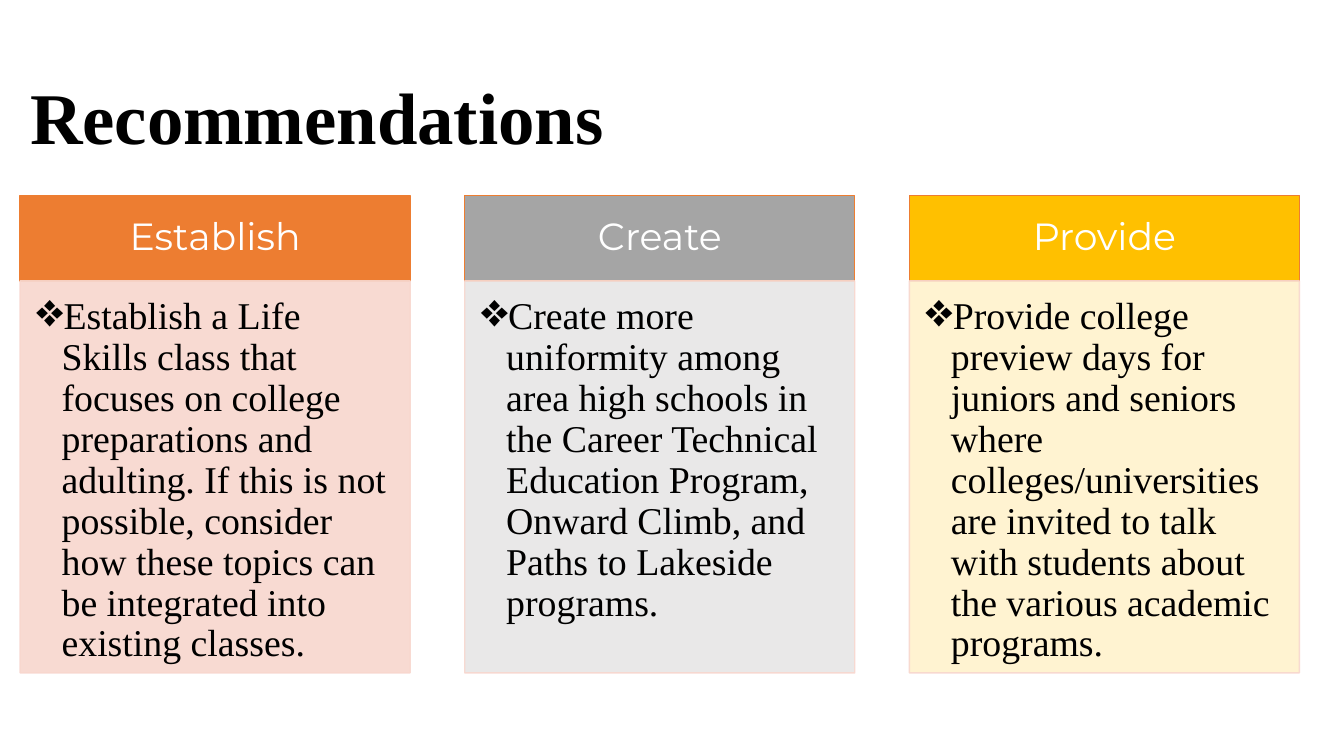
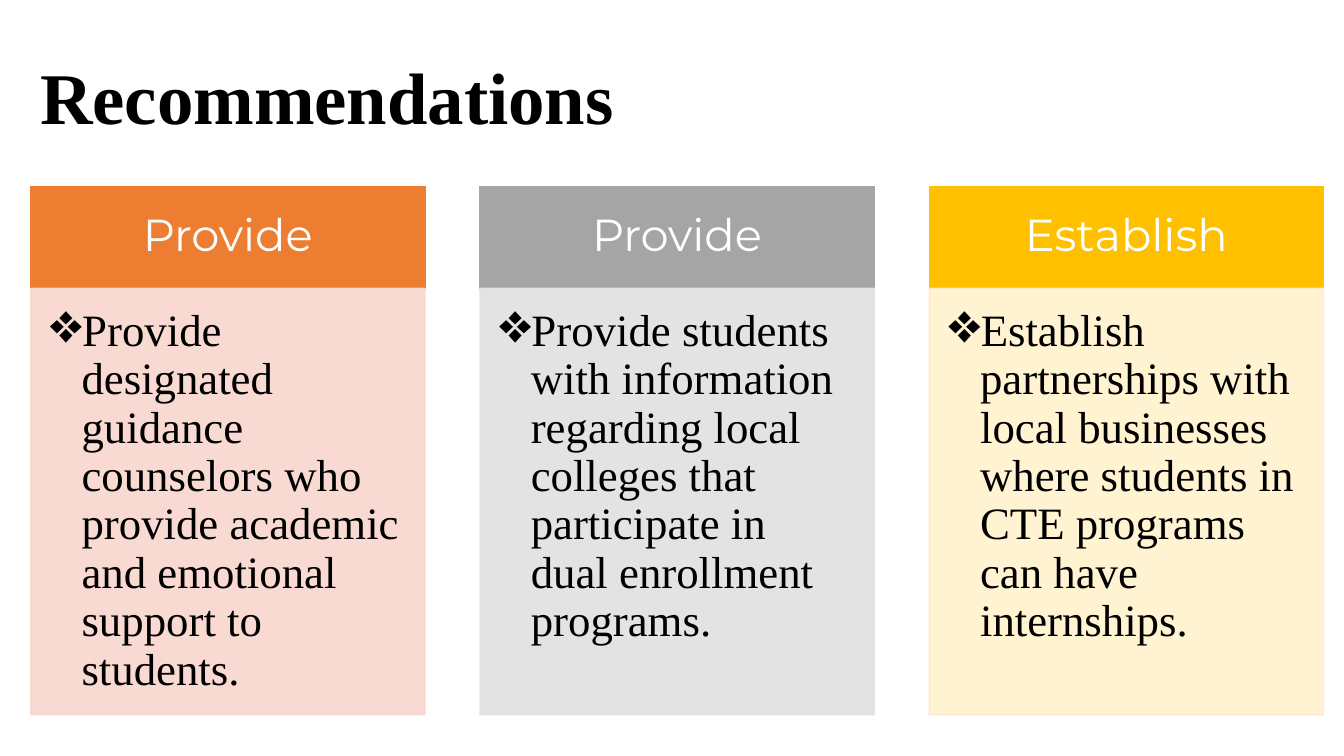
from lxml import etree
from pptx import Presentation
from pptx.dml.color import RGBColor
from pptx.enum.shapes import MSO_SHAPE
from pptx.enum.text import MSO_ANCHOR, PP_ALIGN
from pptx.oxml.ns import qn
from pptx.util import Pt

RECTANGLE = MSO_SHAPE.RECTANGLE
TOP, MIDDLE = MSO_ANCHOR.TOP, MSO_ANCHOR.MIDDLE
LEFT, CENTER = PP_ALIGN.LEFT, PP_ALIGN.CENTER

# Shared look
WHITE = RGBColor(0xFF, 0xFF, 0xFF)
BLACK = RGBColor(0x00, 0x00, 0x00)
ORANGE = RGBColor(0xED, 0x7D, 0x31)
GRAY = RGBColor(0xA5, 0xA5, 0xA5)
GOLD = RGBColor(0xFF, 0xC0, 0x00)
PEACH = RGBColor(0xF8, 0xD7, 0xCE)
PALE_GRAY = RGBColor(0xE7, 0xE6, 0xE6)
SILVER = RGBColor(0xE1, 0xE1, 0xE1)
CREAM = RGBColor(0xFF, 0xF2, 0xCC)
APRICOT = RGBColor(0xFF, 0xE8, 0xCC)
SERIF, SANS = "Times New Roman", "Montserrat"
TITLE_SIZE = 52
GAP_RATIO = 0.14        # gap between columns, as a share of column width
HEADER_INSETS = (0.56, 0.32, 0.56, 0.32)    # left, top, right, bottom, in ems
BODY_INSETS = (0.43, 0.43, 0.56, 0.64)
BODY_OPACITY = "90000"
BULLET_SCALE = "125000"


def set_text(shape, text, size, font, color, align, anchor, bold=False):
    frame = shape.text_frame
    frame.word_wrap = True
    frame.vertical_anchor = anchor
    frame.text = text
    para = frame.paragraphs[0]
    para.alignment = align
    para.line_spacing = 0.9
    span = para.runs[0]
    span.font.name = font
    span.font.size = Pt(size)
    span.font.bold = bold
    span.font.color.rgb = color
    return para


def add_title(page, text, left, top, width, height):
    box = page.shapes.add_textbox(Pt(left), Pt(top), Pt(width), Pt(height))
    set_text(box, text, TITLE_SIZE, SERIF, BLACK, LEFT, MIDDLE, bold=True)


def add_panel(page, left, top, width, height, fill, line, insets, size):
    panel = page.shapes.add_shape(RECTANGLE, Pt(left), Pt(top), Pt(width), Pt(height))
    panel.shadow.inherit = False
    panel.fill.solid()
    panel.fill.fore_color.rgb = fill
    panel.line.color.rgb = line
    panel.line.width = Pt(1)
    frame = panel.text_frame
    (frame.margin_left, frame.margin_top,
     frame.margin_right, frame.margin_bottom) = [Pt(inset * size) for inset in insets]
    return panel


def make_translucent(panel):
    for color in panel._element.spPr.iter(qn("a:srgbClr")):
        etree.SubElement(color, qn("a:alpha"), val=BODY_OPACITY)


def add_bullet(para, indent):
    properties = para._p.get_or_add_pPr()
    properties.set("marL", str(Pt(indent)))
    properties.set("indent", str(-Pt(indent)))
    etree.SubElement(properties, qn("a:buSzPct"), val=BULLET_SCALE)
    etree.SubElement(properties, qn("a:buChar"), char="❖")


def add_column(page, left, top, width, header_height, body_height, size, indent, column):
    heading, text, header_fill, header_line, body_fill, body_line = column
    # Header band
    header = add_panel(page, left, top, width, header_height,
                       header_fill, header_line, HEADER_INSETS, size)
    set_text(header, heading, size, SANS, WHITE, CENTER, MIDDLE)
    # Body with one bullet
    body = add_panel(page, left, top + header_height, width, body_height,
                     body_fill, body_line, BODY_INSETS, size)
    make_translucent(body)
    add_bullet(set_text(body, text, size, SERIF, BLACK, LEFT, TOP), indent)


def add_recommendations(deck, title_box, left, top, width, header_height,
                        body_height, size, indent, columns):
    page = deck.slides.add_slide(deck.slide_layouts[6])
    add_title(page, "Recommendations", *title_box)
    for index, column in enumerate(columns):
        column_left = left + index * width * (1 + GAP_RATIO)
        add_column(page, column_left, top, width, header_height, body_height,
                   size, indent, column)


# Heading, text, header fill and line, body fill and line
FIRST_COLUMNS = [
    ("Establish",
     "Establish a Life Skills class that focuses on college preparations and adulting. "
     "If this is not possible, consider how these topics can be integrated into "
     "existing classes.",
     ORANGE, ORANGE, PEACH, PEACH),
    ("Create",
     "Create more uniformity among area high schools in the Career Technical Education "
     "Program, Onward Climb, and Paths to Lakeside programs.",
     GRAY, ORANGE, PALE_GRAY, PEACH),
    ("Provide",
     "Provide college preview days for juniors and seniors where colleges/universities "
     "are invited to talk with students about the various academic programs.",
     GOLD, ORANGE, CREAM, PEACH),
]
SECOND_COLUMNS = [
    ("Provide",
     "Provide designated guidance counselors who provide academic and emotional support "
     "to students.",
     ORANGE, ORANGE, PEACH, PEACH),
    ("Provide",
     "Provide students with information regarding local colleges that participate in "
     "dual enrollment programs.",
     GRAY, GRAY, SILVER, SILVER),
    ("Establish",
     "Establish partnerships with local businesses where students in CTE programs can "
     "have internships.",
     GOLD, GOLD, CREAM, APRICOT),
]


def main():
    deck = Presentation()
    deck.slide_width, deck.slide_height = Pt(960), Pt(540)
    add_recommendations(deck, (14.4, 41.8, 828, 89.3), left=14.4, top=139.5, width=278.6,
                        header_height=61.2, body_height=280, size=27, indent=18,
                        columns=FIRST_COLUMNS)
    add_recommendations(deck, (21.6, 28.8, 930, 86.4), left=22, top=133.2, width=281.5,
                        header_height=72.7, body_height=304.6, size=32, indent=22.5,
                        columns=SECOND_COLUMNS)
    deck.save("out.pptx")


if __name__ == "__main__":
    main()
